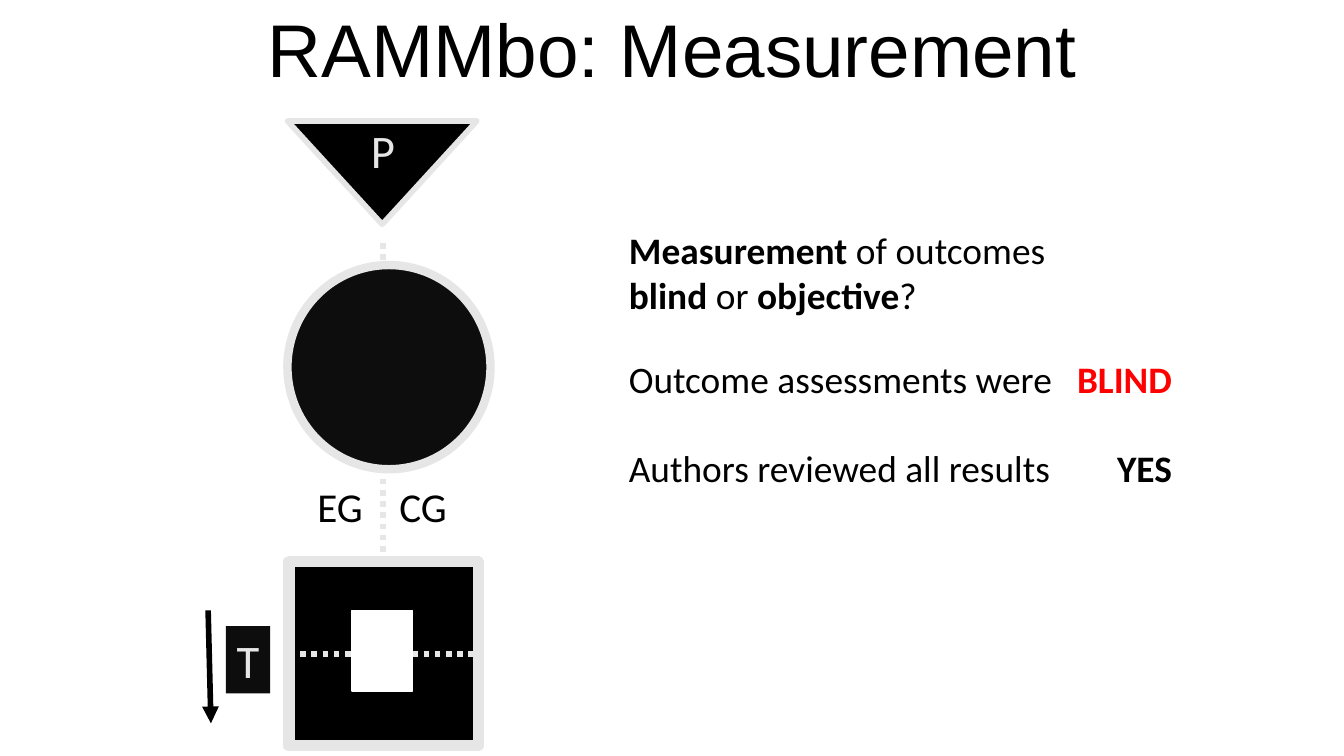
"""Build the RAMMbo measurement slide."""
from dataclasses import dataclass
from typing import Optional

from lxml import etree
from pptx import Presentation
from pptx.dml.color import RGBColor
from pptx.enum.dml import MSO_LINE
from pptx.enum.shapes import MSO_CONNECTOR, MSO_SHAPE
from pptx.enum.text import MSO_ANCHOR, PP_ALIGN
from pptx.oxml.ns import qn
from pptx.util import Pt

RECT = MSO_SHAPE.RECTANGLE
DISC = MSO_SHAPE.OVAL
WEDGE = MSO_SHAPE.ISOSCELES_TRIANGLE
LINE = MSO_CONNECTOR.STRAIGHT
DOTS = MSO_LINE.ROUND_DOT
TOP, MIDDLE = MSO_ANCHOR.TOP, MSO_ANCHOR.MIDDLE
LEFT, CENTER = PP_ALIGN.LEFT, PP_ALIGN.CENTER


@dataclass(frozen=True)
class Theme:
    black: str = "000000"
    dark: str = "0D0D0D"
    pale: str = "E7E6E6"
    white: str = "FFFFFF"
    red: str = "FF0000"
    head: str = "Arial"
    body: str = "Calibri"
    title: float = 40
    mark: float = 25
    group: float = 22
    text: float = 20


T = Theme()


@dataclass(frozen=True)
class Run:
    text: str
    bold: bool = False
    color: str = T.black


@dataclass(frozen=True)
class Block:
    box: tuple
    lines: list
    size: float = T.text
    font: str = T.body
    inset: tuple = (7.2, 3.6)
    align: PP_ALIGN = LEFT
    wrap: bool = True
    lead: float = 1.0
    gap: float = 0
    tab: Optional[tuple] = None


@dataclass(frozen=True)
class Figure:
    kind: MSO_SHAPE
    box: tuple
    fill: str
    edge: Optional[str] = None
    width: float = 0
    turn: float = 0


def rgb(code: str) -> RGBColor:
    return RGBColor.from_string(code)


def write(shape, block: Block, anchor=TOP) -> None:
    frame = shape.text_frame
    frame.word_wrap = block.wrap
    frame.vertical_anchor = anchor
    frame.margin_left = frame.margin_right = Pt(block.inset[0])
    frame.margin_top = frame.margin_bottom = Pt(block.inset[1])
    for i, line in enumerate(block.lines):
        para = frame.add_paragraph() if i else frame.paragraphs[0]
        para.alignment = block.align
        para.line_spacing = block.lead
        para.space_before = Pt(block.gap if i else 0)
        if block.tab:
            side, pos = block.tab
            stops = etree.SubElement(para._p.get_or_add_pPr(), qn("a:tabLst"))
            etree.SubElement(stops, qn("a:tab"), pos=str(Pt(pos)), algn=side)
        for part in line:
            run = para.add_run()
            run.text = part.text
            run.font.name = block.font
            run.font.size = Pt(block.size)
            run.font.bold = part.bold
            run.font.color.rgb = rgb(part.color)


def add_text(slide, block: Block) -> None:
    write(slide.shapes.add_textbox(*map(Pt, block.box)), block)


def add_figure(slide, fig: Figure):
    shape = slide.shapes.add_shape(fig.kind, *map(Pt, fig.box))
    shape.shadow.inherit = False
    shape.rotation = fig.turn
    shape.fill.solid()
    shape.fill.fore_color.rgb = rgb(fig.fill)
    if fig.edge:
        shape.line.color.rgb = rgb(fig.edge)
        shape.line.width = Pt(fig.width)
    else:
        shape.line.fill.background()
    return shape


def add_line(slide, ends: tuple, color: str, dash=None, arrow: bool = False):
    line = slide.shapes.add_connector(LINE, *map(Pt, ends))
    line.line.color.rgb = rgb(color)
    line.line.width = Pt(3)
    if dash:
        line.line.dash_style = dash
    if arrow:
        etree.SubElement(line.line._get_or_add_ln(), qn("a:tailEnd"), type="triangle")
    etree.SubElement(line._element.spPr, qn("a:effectLst"))
    return line


def main() -> None:
    deck = Presentation()
    deck.slide_width, deck.slide_height = Pt(720), Pt(405)
    slide = deck.slides.add_slide(deck.slide_layouts[6])

    add_text(slide, Block((90, 0, 540, 141), [[Run("RAMMbo: Measurement")]],
                          T.title, T.head, (7.2, 7.2), CENTER, lead=0.9))
    add_line(slide, (111.5, 327, 113, 387.5), T.black, arrow=True)
    add_line(slide, (205.2, 130.3, 205.2, 395.3), T.pale, DOTS)
    add_text(slide, Block((164.2, 255, 82, 32.4), [[Run("EG\tCG")]], T.group,
                          inset=(5.76, 2.88), tab=("l", 44)))

    frame = add_figure(slide, Figure(RECT, (154.8, 301, 101.5, 98.6), T.black, T.pale, 6))
    split = add_line(slide, (154.8, 350.3, 256.3, 350.3), T.pale, DOTS)
    split.begin_connect(frame, 1)
    split.end_connect(frame, 3)
    add_figure(slide, Figure(RECT, (188.6, 327, 32.4, 43.2), T.white, T.white, 0.75))

    time = Block((121, 335.5, 23.8, 36), [[Run("T", color=T.pale)]], T.mark,
                 inset=(5.76, 2.88), wrap=False)
    write(add_figure(slide, Figure(RECT, time.box, T.dark)), time, MIDDLE)
    add_figure(slide, Figure(WEDGE, (154, 64.8, 101.5, 55.4), T.black, T.pale, 3, 180))
    add_text(slide, Block((193, 62.6, 24.5, 36), [[Run("P", color=T.pale)]], T.mark,
                          inset=(5.76, 2.88), wrap=False))
    add_figure(slide, Figure(DISC, (154, 142, 108.8, 109.4), T.dark, T.pale, 4.5))

    add_text(slide, Block((329.8, 118, 329.8, 80), [
        [Run("Measurement ", True), Run("of outcomes")],
        [Run("blind ", True), Run("or "), Run("objective", True), Run("?")],
    ]))
    add_text(slide, Block((329.8, 187.2, 340.6, 225.4), [
        [Run("Outcome assessments were\t"), Run("BLIND", True, T.red)],
        [Run("Authors reviewed all results\t"), Run("YES", True)],
    ], gap=24, tab=("r", 291)))
    deck.save("out.pptx")


if __name__ == "__main__":
    main()
